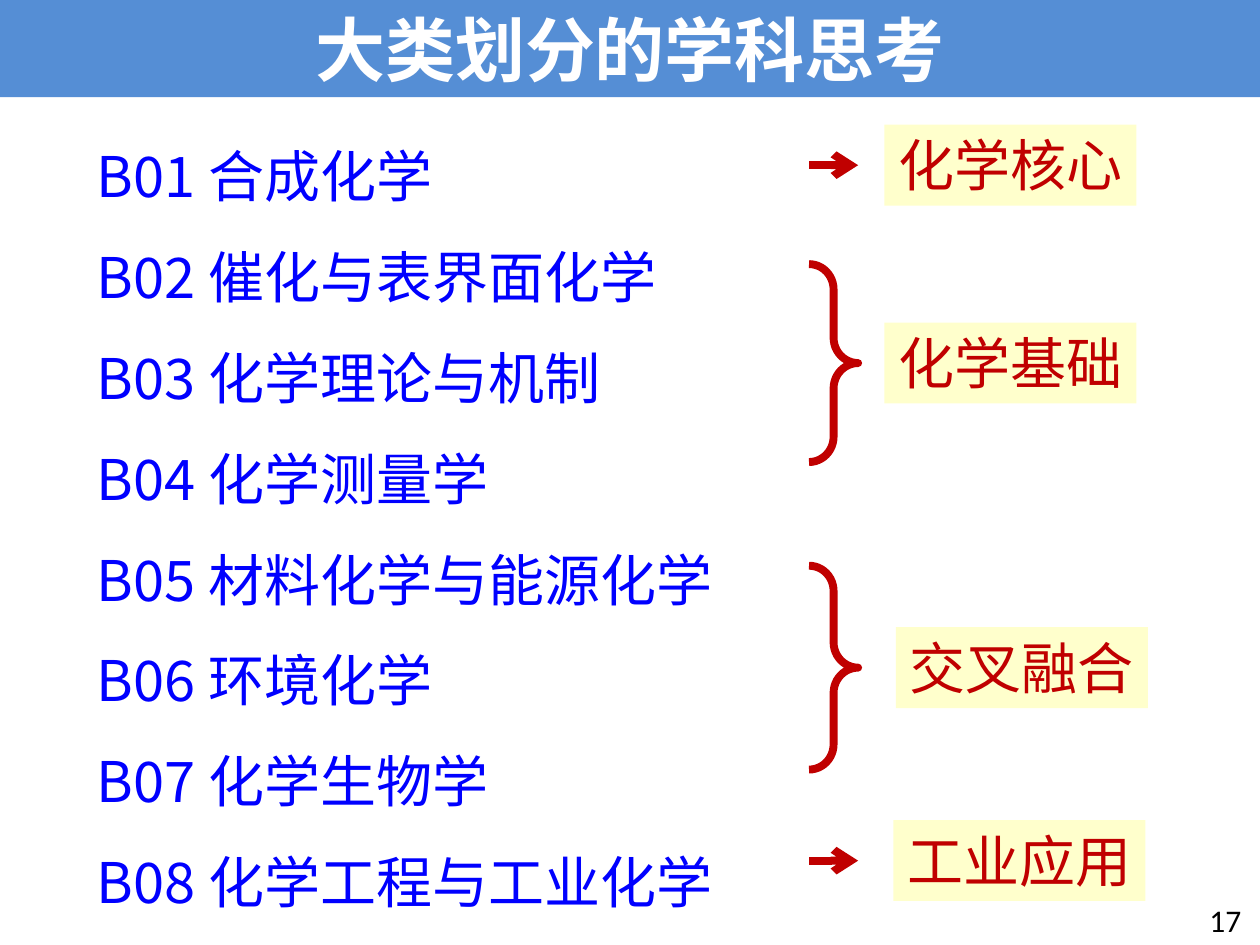
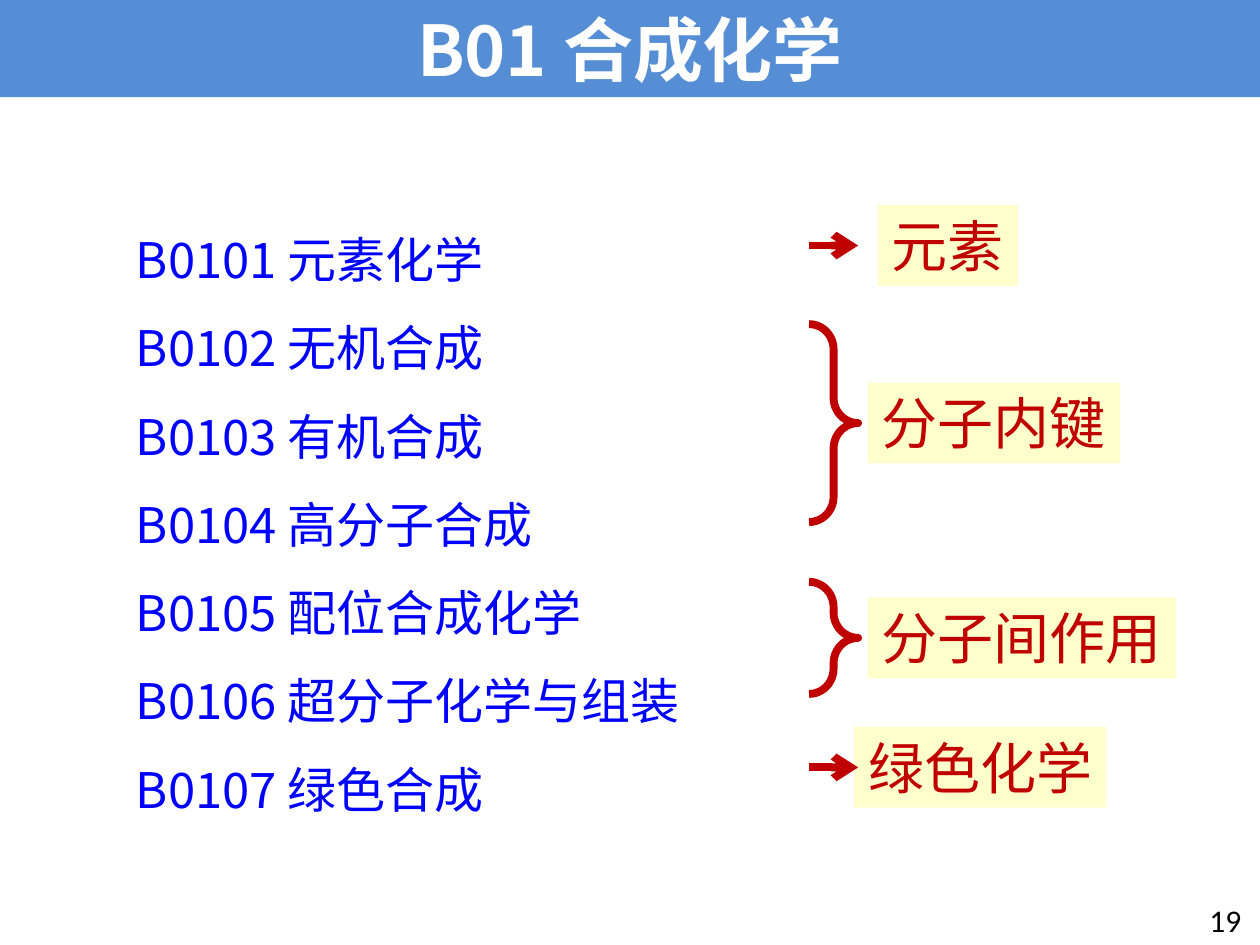
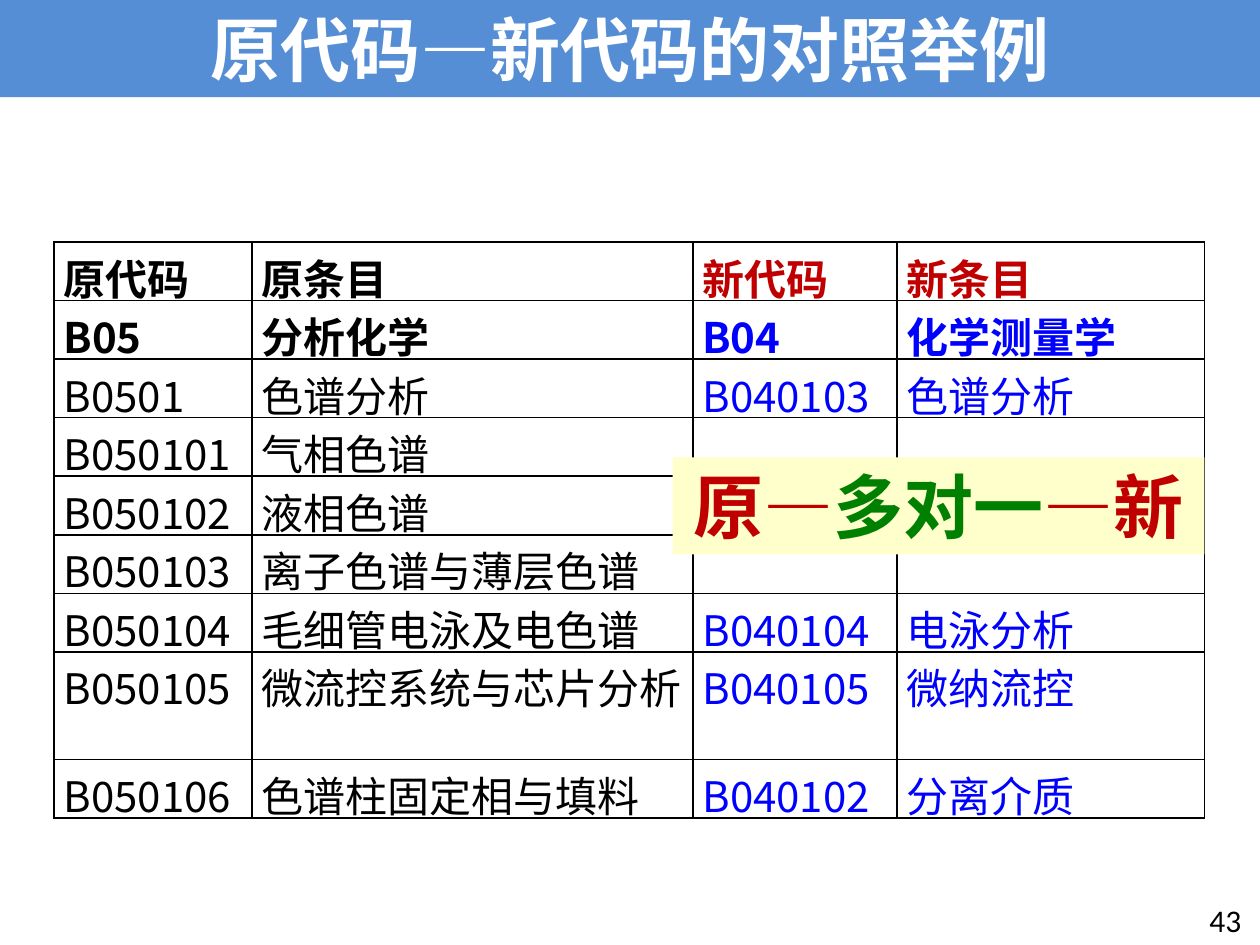
from pptx import Presentation
from pptx.dml.color import RGBColor
from pptx.enum.shapes import MSO_CONNECTOR, MSO_SHAPE
from pptx.enum.text import MSO_ANCHOR, MSO_AUTO_SIZE, PP_ALIGN as ALIGN
from pptx.oxml.ns import qn
from pptx.util import Cm, Pt
from lxml.etree import SubElement

COLORS = {
    "band": "558ED5",
    "label": "FFFFCC",
    "red": "C00000",
    "blue": "0000FF",
    "green": "008000",
    "black": "000000",
    "white": "FFFFFF",
}
CJK, LATIN = "Noto Sans CJK SC", "Calibri"
SLIDE_W, SLIDE_H = 25.4, 19.05
BAND_H = 1.96
MARK_X, MARK_W = 16.31, 0.99
LABEL_H = 1.63


def rgb(name):
    return RGBColor.from_string(COLORS[name])


def add_run(p, text, size, color, bold=False, font=CJK):
    r = p.add_run()
    r.text = text
    r.font.size = Pt(size)
    r.font.bold = bold
    r.font.name = font
    r.font.color.rgb = rgb(color)
    SubElement(r._r.get_or_add_rPr(), qn("a:ea"), typeface=font)


def add_text(slide, x, y, w, h, wrap=True):
    tf = slide.shapes.add_textbox(Cm(x), Cm(y), Cm(w), Cm(h)).text_frame
    tf.word_wrap = wrap
    tf.auto_size = MSO_AUTO_SIZE.SHAPE_TO_FIT_TEXT
    return tf


def add_box(slide, x, y, w, h, fill, runs, size, bold=False, wrap=False):
    """Filled rectangle with one centred line made of (text, color) runs."""
    sp = slide.shapes.add_shape(MSO_SHAPE.RECTANGLE, Cm(x), Cm(y), Cm(w), Cm(h))
    sp.shadow.inherit = False
    sp.fill.solid()
    sp.fill.fore_color.rgb = rgb(fill)
    sp.line.fill.background()
    tf = sp.text_frame
    tf.word_wrap = wrap
    tf.auto_size = MSO_AUTO_SIZE.SHAPE_TO_FIT_TEXT
    tf.vertical_anchor = MSO_ANCHOR.TOP
    p = tf.paragraphs[0]
    p.alignment = ALIGN.CENTER
    for text, color in runs:
        add_run(p, text, size, color, bold)


def add_slide(prs, title, number):
    slide = prs.slides.add_slide(prs.slide_layouts[6])
    add_box(slide, 0, 0, SLIDE_W, BAND_H, "band", [(title, "white")], 40, True, True)
    tf = add_text(slide, 24.13, 18.03, 1.27, 1.02, wrap=False)
    add_run(tf.paragraphs[0], number, 18, "black", font=LATIN)
    return slide


def add_code_list(slide, x, y, w, h, items, size, align):
    tf = add_text(slide, x, y, w, h)
    for i, item in enumerate(items):
        p = tf.add_paragraph() if i else tf.paragraphs[0]
        p.alignment = align
        p.line_spacing = 1.5
        add_run(p, item, size, "blue")


def style_mark(shape):
    shape.line.color.rgb = rgb("red")
    shape.line.width = Pt(4.5)


def add_brace(slide, middle, height):
    sp = slide.shapes.add_shape(MSO_SHAPE.RIGHT_BRACE, Cm(MARK_X),
                                Cm(middle - height / 2), Cm(MARK_W), Cm(height))
    sp.adjustments[0], sp.adjustments[1] = 0.516, 0.5
    sp.shadow.inherit = False
    sp.fill.background()
    style_mark(sp)


def add_arrow(slide, middle):
    line = slide.shapes.add_connector(MSO_CONNECTOR.STRAIGHT, Cm(MARK_X), Cm(middle),
                                      Cm(MARK_X + MARK_W), Cm(middle))
    style_mark(line)
    SubElement(line.line._get_or_add_ln(), qn("a:tailEnd"), type="arrow")
    SubElement(line._element.spPr, qn("a:effectLst"))


def add_category(slide, name, x, middle, brace_h=0):
    """Label centred on a brace, or on an arrow when it covers a single row."""
    width = 0.56 + 1.13 * len(name)
    add_box(slide, x, middle - LABEL_H / 2, width, LABEL_H, "label", [(name, "red")], 32)
    if brace_h:
        add_brace(slide, middle, brace_h)
    else:
        add_arrow(slide, middle)


def style_cell(cell):
    cell.margin_left = cell.margin_right = Cm(0.19)
    cell.margin_top = cell.margin_bottom = 0
    tcPr = cell._tc.get_or_add_tcPr()
    for side in ("lnL", "lnR", "lnT", "lnB"):
        ln = SubElement(tcPr, qn(f"a:{side}"), w=str(Pt(1)))
        fill = SubElement(ln, qn("a:solidFill"))
        SubElement(fill, qn("a:srgbClr"), val=COLORS["black"])
    cell.fill.background()


def add_code_table(slide, x, y, widths, heights, rows):
    table = slide.shapes.add_table(len(rows), len(widths), Cm(x), Cm(y),
                                   Cm(sum(widths)), Cm(sum(heights))).table
    table.first_row = table.horz_banding = False
    for column, width in zip(table.columns, widths):
        column.width = Cm(width)
    for i, (row, height) in enumerate(zip(rows, heights)):
        table.rows[i].height = Cm(height)
        for j, text in enumerate(row):
            cell = table.cell(i, j)
            style_cell(cell)
            p = cell.text_frame.paragraphs[0]
            p.alignment = ALIGN.JUSTIFY
            p.line_spacing = 1.07
            new_color = "blue" if i else "red"
            if text:
                add_run(p, text, 24, new_color if j > 1 else "black", bold=i < 2)


def main():
    prs = Presentation()
    prs.slide_width, prs.slide_height = Cm(SLIDE_W), Cm(SLIDE_H)

    slide = add_slide(prs, "大类划分的学科思考", "17")
    add_code_list(slide, 1.7, 2.06, 15.39, 16.66, [
        "B01 合成化学", "B02 催化与表界面化学", "B03 化学理论与机制",
        "B04 化学测量学", "B05 材料化学与能源化学", "B06 环境化学",
        "B07 化学生物学", "B08 化学工程与工业化学",
    ], 32, ALIGN.LEFT)
    add_category(slide, "化学核心", 17.83, 3.33)
    add_category(slide, "化学基础", 17.83, 7.32, 3.99)
    add_category(slide, "交叉融合", 18.06, 13.46, 4.11)
    add_category(slide, "工业应用", 18.01, 17.35)

    slide = add_slide(prs, "B01 合成化学", "19")
    add_code_list(slide, 2.49, 3.91, 14.61, 12.83, [
        "B0101 元素化学", "B0102 无机合成", "B0103 有机合成", "B0104 高分子合成",
        "B0105 配位合成化学", "B0106 超分子化学与组装", "B0107 绿色合成",
    ], 28, ALIGN.JUSTIFY)
    add_category(slide, "元素", 17.7, 4.95)
    add_category(slide, "分子内键", 17.5, 8.53, 3.99)
    add_category(slide, "分子间作用", 17.5, 12.86, 2.26)
    add_category(slide, "绿色化学", 17.22, 15.47)

    slide = add_slide(prs, "原代码—新代码的对照举例", "43")
    rows = [
        ("原代码", "原条目", "新代码", "新条目"),
        ("B05", "分析化学", "B04", "化学测量学"),
        ("B0501", "色谱分析", "B040103", "色谱分析"),
        ("B050101", "气相色谱", "", ""),
        ("B050102", "液相色谱", "", ""),
        ("B050103", "离子色谱与薄层色谱", "", ""),
        ("B050104", "毛细管电泳及电色谱", "B040104", "电泳分析"),
        ("B050105", "微流控系统与芯片分析", "B040105", "微纳流控"),
        ("B050106", "色谱柱固定相与填料", "B040102", "分离介质"),
    ]
    heights = [1.18] * 7 + [2.17, 1.18]
    add_code_table(slide, 1.09, 4.88, [3.99, 8.89, 4.11, 6.2], heights, rows)
    add_box(slide, 13.56, 9.22, 10.72, BAND_H, "label",
            [("原—", "red"), ("多对一", "green"), ("—新", "red")], 40, True)

    prs.save("out.pptx")


if __name__ == "__main__":
    main()
